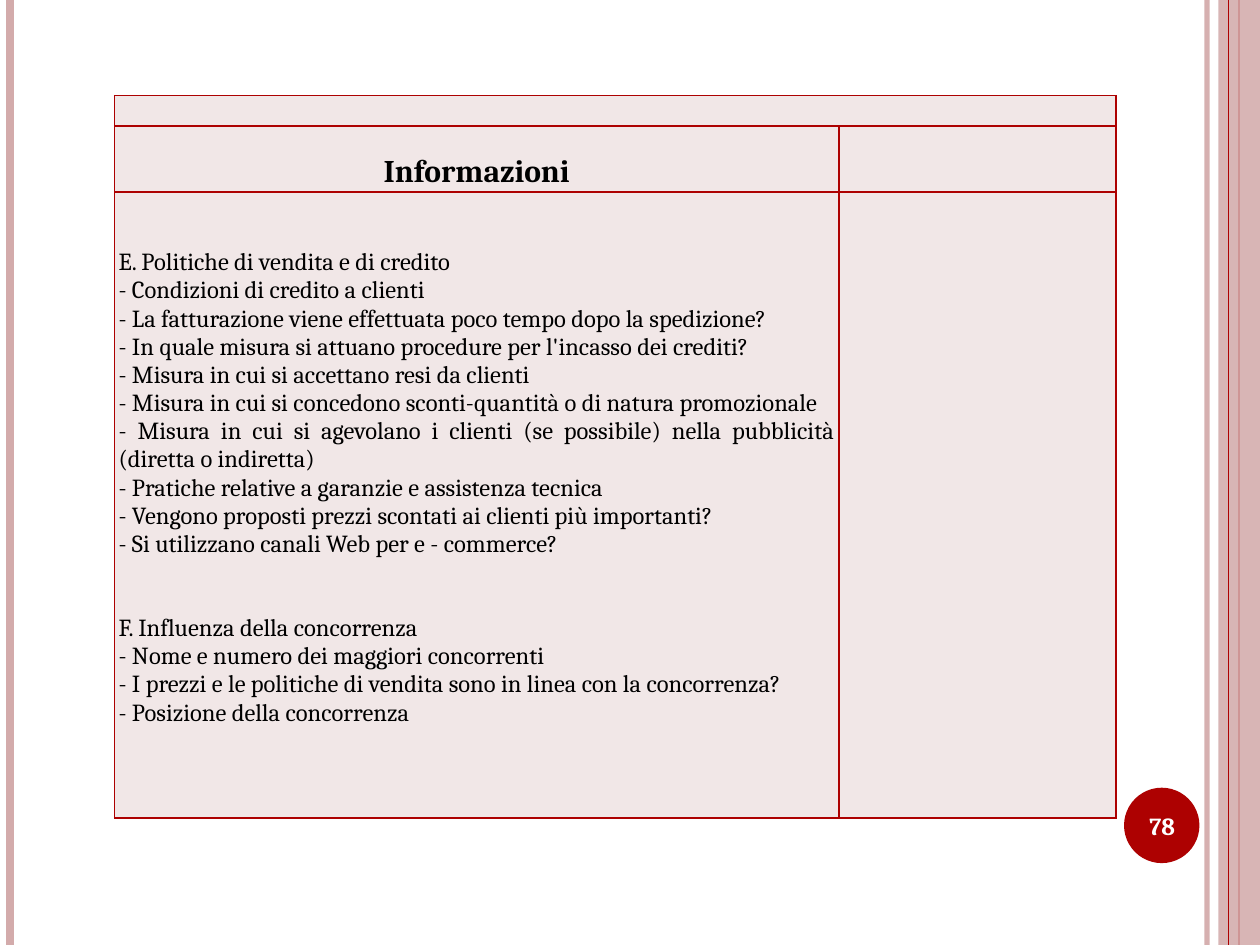
from lxml.etree import SubElement
from pptx import Presentation
from pptx.dml.color import RGBColor
from pptx.enum.shapes import MSO_CONNECTOR, MSO_SHAPE
from pptx.enum.text import MSO_ANCHOR, PP_ALIGN
from pptx.oxml.ns import qn
from pptx.util import Cm, Pt

RED = RGBColor(0xAD, 0x01, 0x01)
ROSE = RGBColor(0xD3, 0xAB, 0xAB)
PALE = RGBColor(0xF1, 0xE7, 0xE7)
BLACK = RGBColor(0, 0, 0)
WHITE = RGBColor(255, 255, 255)
FONT = "Cambria"


def write(frame, lines, size=14, color=BLACK, bold=False,
          align=PP_ALIGN.LEFT, gap_before=()):
    """Write one paragraph per line; lines in gap_before get a wide gap above."""
    for index, line in enumerate(lines):
        para = frame.paragraphs[0] if index == 0 else frame.add_paragraph()
        para.alignment = align
        if line in gap_before:
            para.space_before = Pt(32)
        span = para.add_run()
        span.text = line
        span.font.name = FONT
        span.font.size = Pt(size)
        span.font.bold = bold
        span.font.color.rgb = color


def set_alpha(fill_parent, percent):
    """Make the solid colour inside an element partly transparent."""
    color = next(fill_parent.iter(qn("a:srgbClr")))
    SubElement(color, qn("a:alpha"), val=str(percent * 1000))


deck = Presentation()
deck.slide_width, deck.slide_height = Cm(25.4), Cm(19.05)
page = deck.slides.add_slide(deck.slide_layouts[6])

# Vertical rules: x, colour, width, opacity
rules = []
for x, color, width, opacity in [
    (24.33, ROSE, 3, 93),
    (0.2, ROSE, 4.5, 100),
    (24.98, RED, 1.5, 100),
    (24.77, RED, 0.75, 100),
]:
    rule = page.shapes.add_connector(
        MSO_CONNECTOR.STRAIGHT, Cm(x), Cm(0), Cm(x), deck.slide_height)
    rule.line.color.rgb = color
    rule.line.width = Pt(width)
    properties = rule._element.spPr
    SubElement(properties, qn("a:effectLst"))
    if opacity < 100:
        set_alpha(properties, opacity)
    rules.append(rule)

# Right band, drawn over its centre rule and under the thin rule
band = page.shapes.add_shape(
    MSO_SHAPE.RECTANGLE, Cm(24.56), Cm(0), Cm(0.84), deck.slide_height)
band.shadow.inherit = False
band.fill.solid()
band.fill.fore_color.rgb = ROSE
set_alpha(band._element.spPr, 87)
band.line.fill.background()
rules[2].begin_connect(band, 0)
rules[2].end_connect(band, 2)
band._element.addnext(rules[3]._element)

# Page number
badge = page.shapes.add_shape(
    MSO_SHAPE.OVAL, Cm(22.66), Cm(15.88), Cm(1.52), Cm(1.52))
badge.shadow.inherit = False
badge.fill.solid()
badge.fill.fore_color.rgb = RED
badge.line.fill.background()
number = page.shapes.add_textbox(Cm(22.58), Cm(15.93), Cm(1.7), Cm(1.45))
number.text_frame.word_wrap = True
number.text_frame.vertical_anchor = MSO_ANCHOR.MIDDLE
write(number.text_frame, ["78"], color=WHITE, bold=True, align=PP_ALIGN.CENTER)

# Table grid
widths = [14.6, 5.59]
heights = [0.61, 1.3, 12.62]
table = page.shapes.add_table(
    len(heights), len(widths), Cm(2.31), Cm(1.93),
    Cm(sum(widths)), Cm(sum(heights))).table
table.first_row = False
table.horz_banding = False
for column, width in zip(table.columns, widths):
    column.width = Cm(width)
for row, height in zip(table.rows, heights):
    row.height = Cm(height)
table.cell(0, 0).merge(table.cell(0, 1))

# Cell margins, borders and fill
for cell in table.iter_cells():
    cell.margin_left = cell.margin_right = Cm(0.08)
    cell.margin_top = cell.margin_bottom = Cm(0)
    properties = cell._tc.get_or_add_tcPr()
    for side in ("lnL", "lnR", "lnT", "lnB"):
        border = SubElement(properties, qn(f"a:{side}"), w=str(Pt(1)))
        paint = SubElement(border, qn("a:solidFill"))
        SubElement(paint, qn("a:srgbClr"), val=str(RED))
    cell.fill.solid()
    cell.fill.fore_color.rgb = PALE

# Small type in the empty cells keeps the rows at their set height
for row, column in [(0, 0), (0, 1), (1, 1), (2, 1)]:
    para = table.cell(row, column).text_frame.paragraphs[0]
    SubElement(para._p, qn("a:endParaRPr"), sz="1000")

# Table text
heading = table.cell(1, 0)
heading.margin_top = Cm(0.57)
write(heading.text_frame, ["Informazioni"], size=18, bold=True,
      align=PP_ALIGN.CENTER)

competition = "F. Influenza della concorrenza"
body = table.cell(2, 0)
body.margin_top = Cm(1.14)
write(body.text_frame, [
    "E. Politiche di vendita e di credito",
    "- Condizioni di credito a clienti",
    "- La fatturazione viene effettuata poco tempo dopo la spedizione?",
    "- In quale misura si attuano procedure per l'incasso dei crediti?",
    "- Misura in cui si accettano resi da clienti",
    "- Misura in cui si concedono sconti-quantità o di natura promozionale",
    "- Misura in cui si agevolano i clienti (se possibile) nella pubblicità "
    "(diretta o indiretta)",
    "- Pratiche relative a garanzie e assistenza tecnica",
    "- Vengono proposti prezzi scontati ai clienti più importanti?",
    "- Si utilizzano canali Web per e - commerce?",
    competition,
    "- Nome e numero dei maggiori concorrenti",
    "- I prezzi e le politiche di vendita sono in linea con la concorrenza?",
    "- Posizione della concorrenza",
], align=PP_ALIGN.JUSTIFY, gap_before=[competition])

deck.save("out.pptx")
